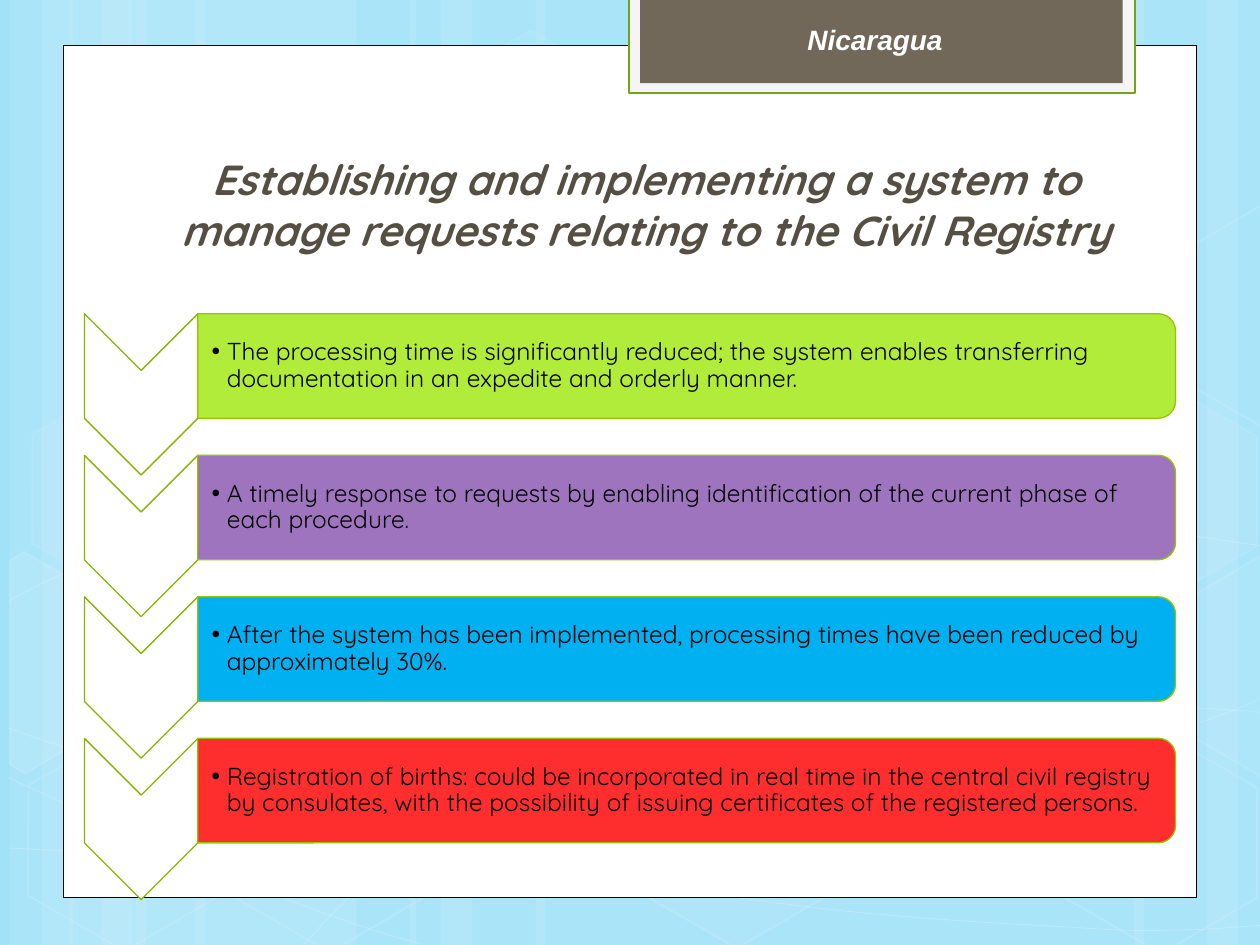
from lxml import etree
from pptx import Presentation
from pptx.dml.color import RGBColor
from pptx.enum.shapes import MSO_SHAPE
from pptx.enum.text import MSO_ANCHOR, MSO_AUTO_SIZE, PP_ALIGN
from pptx.oxml.ns import qn
from pptx.util import Inches, Pt

RECT, HEXAGON = MSO_SHAPE.RECTANGLE, MSO_SHAPE.HEXAGON
CHEVRON, BAR = MSO_SHAPE.CHEVRON, MSO_SHAPE.ROUND_2_SAME_RECTANGLE
CENTER = PP_ALIGN.CENTER
TOP, MIDDLE, BOTTOM = MSO_ANCHOR.TOP, MSO_ANCHOR.MIDDLE, MSO_ANCHOR.BOTTOM
FIT_SHAPE = MSO_AUTO_SIZE.SHAPE_TO_FIT_TEXT

COLORS = {
    "sky": "A1E2F9", "white": "FFFFFF", "black": "000000",
    "tab": "71685A", "tab_frame": "F5F5F5", "tab_line": "74A510",
    "title": "554E43", "chevron_line": "86B400", "bar_line": "94C600",
    "lime": "AAEA25", "purple": "7030A0", "blue": "00B0F0", "red": "FF0000",
}

# Left edge and width of the full-height background bands
BANDS = [(1.08, 1.75), (0.08, 0.5), (0.33, 0.83), (1.55, 1.75), (0.55, 0.5),
         (0.8, 0.83), (7.33, 1.75), (9.58, 0.5), (9, 0.83), (4.25, 3.08),
         (3.25, 0.5), (3.5, 0.83)]

# Bezier chains: a start point, then three points for each segment
WAVES = [
    [(0.07, 6.73), (0.61, 6.76), (1.15, 6.79), (1.9, 6.78), (2.65, 6.77),
     (3.58, 6.75), (4.58, 6.65), (5.58, 6.55), (7, 6.36), (7.92, 6.17),
     (8.83, 5.98), (9.77, 5.68), (10.07, 5.51)],
    [(0.07, 4.77), (0.36, 4.61), (0.65, 4.46), (1.21, 4.31), (1.78, 4.16),
     (2.59, 3.94), (3.47, 3.87), (4.36, 3.8), (5.44, 3.79), (6.54, 3.87),
     (7.64, 3.95), (9.47, 4.26), (10.07, 4.34)],
    [(0.06, 6.17), (1.27, 6.72), (2.47, 7.27), (3.34, 7.49)],
    [(0.07, 5.78), (0.38, 5.89), (0.7, 6), (1.28, 6.16), (1.86, 6.31),
     (2.73, 6.56), (3.57, 6.73), (4.4, 6.9), (5.45, 7.08), (6.28, 7.18),
     (7.11, 7.29), (8, 7.33), (8.53, 7.36), (9.05, 7.4), (9.19, 7.38),
     (9.45, 7.38), (9.71, 7.37), (9.89, 7.35), (10.07, 7.34)],
    [(2.42, 7.49), (2.6, 7.29), (2.78, 7.09), (3.02, 6.91), (3.26, 6.73),
     (3.6, 6.53), (3.88, 6.39), (4.16, 6.25), (4.33, 6.19), (4.7, 6.09),
     (5.06, 5.99), (5.73, 5.85), (6.08, 5.78), (6.44, 5.71), (6.49, 5.71),
     (6.8, 5.69), (7.11, 5.66), (7.6, 5.63), (7.94, 5.62), (8.29, 5.61),
     (8.86, 5.62), (8.86, 5.62), (9.08, 5.62), (9.31, 5.62), (9.53, 5.62),
     (9.71, 5.63), (9.88, 5.64), (9.97, 5.65), (10.06, 5.66), (10.03, 5.65),
     (10.06, 5.66)],
]

# Left, top, fill opacity and line opacity in percent
HEXAGONS = [(3.34, 0.36, 4, 8), (4.97, 5.89, 6, 12), (0.11, 5.91, 0, 12),
            (0.14, 3.12, 7, 8), (1.74, 5.92, 0, 12), (7.53, 4.53, 10, 12),
            (8.34, 5.93, 0, 12), (8.34, 3.14, 7, 8)]

# Hexagons cut by the slide edge: outline and fill opacity
CUT_HEXAGONS = [
    ([(0.08, 4.45), (0.19, 4.38), (0.96, 4.82), (0.95, 5.7), (0.2, 6.14),
      (0.08, 6.07)], 10),
    ([(9.26, 4.85), (10.01, 4.41), (10.09, 4.46), (10.09, 6.13),
      (10.02, 6.17), (9.26, 5.73)], 4),
    ([(9.26, 2.07), (10.01, 1.63), (10.1, 1.68), (10.09, 3.35),
      (10.02, 3.39), (9.26, 2.95)], 0),
]

# Text, bar colour, bar opacity, chevron opacity
ROWS = [
    ("The processing time is significantly reduced; the system enables "
     "transferring documentation in an expedite and orderly manner.",
     "lime", 90, 100),
    ("A timely response to requests by enabling identification of the "
     "current phase of each procedure.", "purple", 67, 100),
    ("After the system has been implemented, processing times have been "
     "reduced by approximately 30%.", "blue", 100, 77),
    ("Registration of births: could be incorporated in real time in the "
     "central civil registry by consulates, with the possibility of issuing "
     "certificates of the registered persons.", "red", 82, 100),
]


def paint(fill, color, opacity=100):
    if not opacity:
        fill.background()
        return
    fill.solid()
    fill.fore_color.rgb = RGBColor.from_string(COLORS[color])
    if opacity < 100:
        rgb = fill._xPr.find(".//" + qn("a:srgbClr"))
        etree.SubElement(rgb, qn("a:alpha"), val=str(opacity * 1000))


def style(sp, fill, opacity=100, line=None, width=1, line_opacity=100):
    sp.shadow.inherit = False
    paint(sp.fill, fill, opacity)
    paint(sp.line.fill, line, line_opacity if line else 0)
    if line:
        sp.line.width = Pt(width)
    return sp


def add_shape(parent, kind, x, y, w, h):
    return parent.shapes.add_shape(kind, Inches(x), Inches(y), Inches(w),
                                   Inches(h))


def add_turned(parent, kind, x, y, w, h):
    """Turn a shape by 90 degrees so that it fills the given box."""
    sp = add_shape(parent, kind, x + (w - h) / 2, y + (h - w) / 2, h, w)
    sp.rotation = 90
    return sp


def add_outline(parent, points, close):
    points = [(Inches(x), Inches(y)) for x, y in points]
    builder = parent.shapes.build_freeform(*points[0])
    builder.add_line_segments(points[1:], close=close)
    return builder.convert_to_shape()


def add_wave(parent, chain):
    """Draw the chain and turn each three line steps into one curve."""
    sp = add_outline(parent, chain, False)
    steps = list(sp._element.iter(qn("a:lnTo")))
    for i in range(0, len(steps), 3):
        curve = etree.Element(qn("a:cubicBezTo"))
        steps[i].addprevious(curve)
        for step in steps[i:i + 3]:
            curve.append(step[0])
            step.getparent().remove(step)
    return sp


def add_text(parent, box, text, font, size, color, anchor, bold=False):
    tb = parent.shapes.add_textbox(*(Inches(v) for v in box))
    tf = tb.text_frame
    tf.word_wrap = True
    tf.vertical_anchor = anchor
    p = tf.paragraphs[0]
    r = p.add_run()
    r.text = text
    r.font.name, r.font.size = font, Pt(size)
    r.font.bold = r.font.italic = bold
    r.font.color.rgb = RGBColor.from_string(COLORS[color])
    return tf, p


def add_background(s, height):
    group = s.shapes.add_group_shape()
    for x, w in BANDS:
        style(add_shape(group, RECT, x, 0, w, height), "white", 10)
    for chain in WAVES:
        style(add_wave(group, chain), "white", 0, "white", 0.5, 20)
    for x, y, opacity, line_opacity in HEXAGONS:
        sp = add_shape(group, HEXAGON, x, y, 1.75, 1.52)
        sp.adjustments[0] = 0.285
        sp.rotation = 30
        style(sp, "white", opacity, "white", 1, line_opacity)
    for points, opacity in CUT_HEXAGONS:
        style(add_outline(group, points, True), "white", opacity,
              "white", 1, 12)


def add_tab_frame(s, x, y, w, h):
    style(add_shape(s, RECT, x, y, w, h), "tab_frame", 100, "tab_line", 1.25)
    style(add_shape(s, RECT, x + 0.09, y, w - 0.19, h - 0.08), "tab")


def move_to_layout(s):
    """Make the decoration part of the layout, in place of its placeholders."""
    layout = s.slide_layout
    for ph in list(layout.placeholders):
        ph._element.getparent().remove(ph._element)
    for sp in list(s.shapes):
        layout.shapes._spTree.append(sp._element)


def add_country(s, *box):
    tf, p = add_text(s, box, "Nicaragua", "Arial", 16, "white", TOP, True)
    tf.auto_size = FIT_SHAPE
    p.alignment = CENTER


def add_title(s, *box):
    _, p = add_text(s, box, "Establishing and implementing a system to manage "
                    "requests relating to the Civil Registry",
                    "Quicksand", 24, "title", BOTTOM, True)
    p.alignment = CENTER


def add_row(parent, x, y, w, row):
    text, color, opacity, chevron_opacity = row
    chevron_w, bar_h = 0.9, 0.83
    style(add_turned(parent, CHEVRON, x, y, chevron_w, 1.28), "white",
          chevron_opacity, "chevron_line", 0.75)
    bar_x, bar_w = x + chevron_w, w - chevron_w
    style(add_turned(parent, BAR, bar_x, y, bar_w, bar_h), color, opacity,
          "bar_line", 0.75)
    # Bulleted text over the bar
    tf, p = add_text(parent, (bar_x, y + 0.04, bar_w - 0.04, bar_h - 0.08),
                     text, "Quicksand", 14, "black", MIDDLE)
    tf.margin_left = Inches(0.11)
    tf.margin_top = tf.margin_right = tf.margin_bottom = Inches(0.01)
    p.line_spacing = 0.9
    pPr = p._p.get_or_add_pPr()
    pPr.set("marL", str(Inches(0.12)))
    pPr.set("indent", str(-Inches(0.12)))
    etree.SubElement(pPr, qn("a:buFont"), typeface="Arial")
    etree.SubElement(pPr, qn("a:buChar"), char="•")


def main():
    prs = Presentation()
    prs.slide_width, prs.slide_height = Inches(10), Inches(7.5)
    s = prs.slides.add_slide(prs.slide_layouts[6])
    paint(s.background.fill, "sky")
    # Decoration
    add_background(s, 7.5)
    style(add_shape(s, RECT, 0.5, 0.36, 9, 6.76), "white", 100, "black", 0.5)
    add_tab_frame(s, 4.99, -0.02, 4.02, 0.76)
    move_to_layout(s)
    # Content
    add_country(s, 5.31, 0.13, 3.27, 0.37)
    add_title(s, 0.91, 0.76, 8.43, 1.31)
    rows = s.shapes.add_group_shape()
    for i, row in enumerate(ROWS):
        add_row(rows, 0.67, 2.49 + 3.37 / 3 * i, 8.66, row)
    prs.save("out.pptx")


if __name__ == "__main__":
    main()
